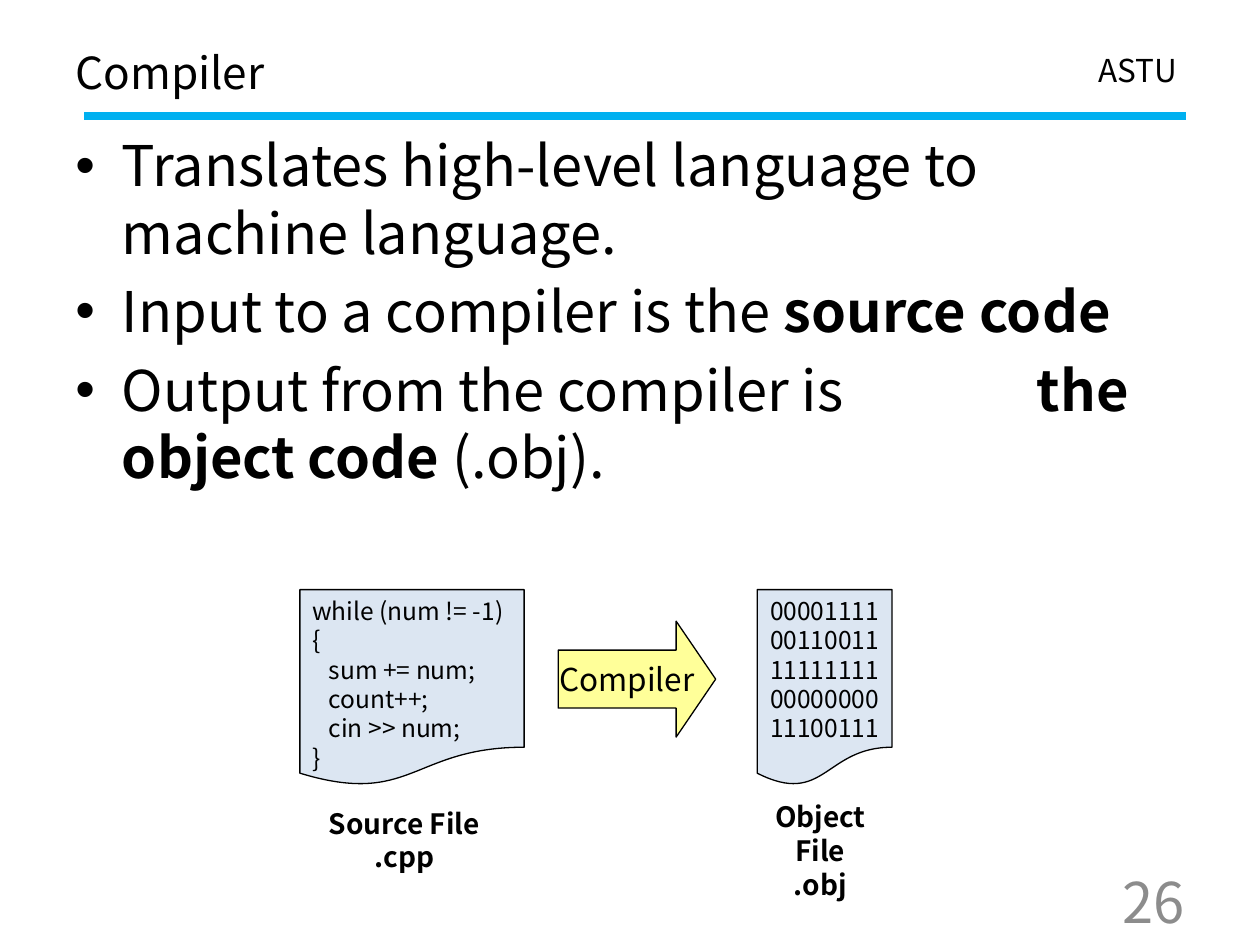
"""Build the slide that explains what a compiler does."""
import dataclasses

import lxml.etree
import pptx
import pptx.dml.color
import pptx.enum.shapes
import pptx.enum.text
import pptx.oxml.ns
import pptx.util

Inches = pptx.util.Inches
Pt = pptx.util.Pt
ALIGN = pptx.enum.text.PP_ALIGN
ANCHOR = pptx.enum.text.MSO_ANCHOR
SHAPE = pptx.enum.shapes.MSO_SHAPE
qn = pptx.oxml.ns.qn


@dataclasses.dataclass(frozen=True)
class Theme:
    """Colours, type sizes and font of the slide."""
    font: str = "Noto Sans CJK KR"
    ink: str = "000000"
    rule: str = "00B0F0"
    page: str = "8C8C8C"
    file_fill: str = "DCE6F2"
    arrow_fill: str = "FFFF99"
    title_size: float = 25.2
    body_size: float = 32
    header_size: float = 18
    code_size: float = 14
    label_size: float = 16
    leading: float = 1.2


THEME = Theme()


def rgb(value):
    """Turn a hex string into a colour."""
    return pptx.dml.color.RGBColor.from_string(value)


def style_run(run, size, color=THEME.ink, bold=False):
    """Apply the theme font to one run."""
    run.font.name = THEME.font
    run.font.size = Pt(size)
    run.font.bold = bold
    run.font.color.rgb = rgb(color)


def style_frame(frame, size, color=THEME.ink, bold=False, align=ALIGN.LEFT,
                anchor=ANCHOR.TOP):
    """Format all the text of a frame alike."""
    frame.vertical_anchor = anchor
    for paragraph in frame.paragraphs:
        paragraph.alignment = align
        paragraph.line_spacing = Pt(size * THEME.leading)
        for run in paragraph.runs:
            style_run(run, size, color, bold)


def add_text(slide, box, text, size, **style):
    """Add a wrapping text box."""
    frame = slide.shapes.add_textbox(*map(Inches, box)).text_frame
    frame.word_wrap = True
    frame.text = text
    style_frame(frame, size, **style)


def add_rule(slide, left, right, y):
    """Draw the line below the title."""
    rule = slide.shapes.add_connector(
        pptx.enum.shapes.MSO_CONNECTOR.STRAIGHT,
        Inches(left), Inches(y), Inches(right), Inches(y))
    rule.line.color.rgb = rgb(THEME.rule)
    rule.line.width = Pt(4.5)
    properties = rule._element.find(qn("p:spPr"))
    lxml.etree.SubElement(properties, qn("a:effectLst"))


def add_bullets(slide, box, bullets, tab):
    """Add bulleted paragraphs, each a list of (text, bold) parts."""
    frame = slide.shapes.add_textbox(*map(Inches, box)).text_frame
    frame.word_wrap = True
    for index, parts in enumerate(bullets):
        paragraph = frame.paragraphs[0] if index == 0 else frame.add_paragraph()
        paragraph.line_spacing = Pt(THEME.body_size * THEME.leading)
        if index:
            paragraph.space_before = Pt(THEME.body_size * 0.2)
        properties = paragraph._p.get_or_add_pPr()
        properties.set("marL", str(Inches(0.37)))
        properties.set("indent", str(-Inches(0.37)))
        lxml.etree.SubElement(properties, qn("a:buFont"), typeface="Arial")
        lxml.etree.SubElement(properties, qn("a:buChar"), char="•")
        stops = lxml.etree.SubElement(properties, qn("a:tabLst"))
        lxml.etree.SubElement(stops, qn("a:tab"), pos=str(Inches(tab)), algn="l")
        for text, bold in parts:
            run = paragraph.add_run()
            run.text = text
            style_run(run, THEME.body_size, bold=bold)


def add_block(slide, kind, box, fill, text, size, inset, **style):
    """Add an outlined shape with text and return it."""
    block = slide.shapes.add_shape(kind, *map(Inches, box))
    block.shadow.inherit = False
    block.fill.solid()
    block.fill.fore_color.rgb = rgb(fill)
    block.line.color.rgb = rgb(THEME.ink)
    block.line.width = Pt(0.75)
    frame = block.text_frame
    frame.word_wrap = True
    frame.margin_left = frame.margin_right = Inches(inset)
    frame.text = text
    style_frame(frame, size, **style)
    return block


def add_file(slide, box, content, inset, align, label_box, label):
    """Add a document shape with its caption."""
    add_block(slide, SHAPE.FLOWCHART_DOCUMENT, box, THEME.file_fill, content,
              THEME.code_size, inset, align=align)
    add_text(slide, label_box, label, THEME.label_size, bold=True,
             align=ALIGN.CENTER)


def main():
    """Build and save the slide."""
    deck = pptx.Presentation()
    deck.slide_width, deck.slide_height = Inches(10), Inches(7.5)
    slide = deck.slides.add_slide(deck.slide_layouts[6])

    add_rule(slide, 0.67, 9.41, 0.92)
    add_text(slide, (8.62, 0.36, 0.87, 0.4), "ASTU", THEME.header_size)
    add_text(slide, (0.5, 0.3, 9, 0.54), "Compiler", THEME.title_size,
             anchor=ANCHOR.MIDDLE)
    add_bullets(slide, (0.5, 0.99, 9, 5.71), [
        [("Translates high-level language to machine language.", False)],
        [("Input to a compiler is the ", False), ("source code", True)],
        [("Output from the compiler is\t", False),
         ("the object code ", True), ("(.obj).", False)],
    ], tab=7.63)
    add_text(slide, (7.17, 6.95, 2.33, 0.4), "26", THEME.body_size,
             color=THEME.page, align=ALIGN.RIGHT, anchor=ANCHOR.MIDDLE)

    arrow = add_block(slide, SHAPE.RIGHT_ARROW, (4.43, 4.93, 1.25, 0.92),
                      THEME.arrow_fill, "Compiler", THEME.header_size, 0,
                      align=ALIGN.CENTER, anchor=ANCHOR.MIDDLE)
    arrow.adjustments[1] = 0.341
    arrow.text_frame.word_wrap = False

    source = "while (num != -1)\v{\n   sum += num;\n   count++;\n   cin >> num;\n}"
    add_file(slide, (2.38, 4.68, 1.78, 1.56), source, 0.1, ALIGN.LEFT,
             (2.51, 6.35, 1.4, 0.64), "Source File\v.cpp")
    machine = "00001111\n00110011\n11111111\n00000000\n11100111"
    add_file(slide, (6.01, 4.68, 1.07, 1.56), machine, 0, ALIGN.CENTER,
             (5.84, 6.3, 1.34, 0.64), "Object\vFile\v.obj")

    deck.save("out.pptx")


if __name__ == "__main__":
    main()
